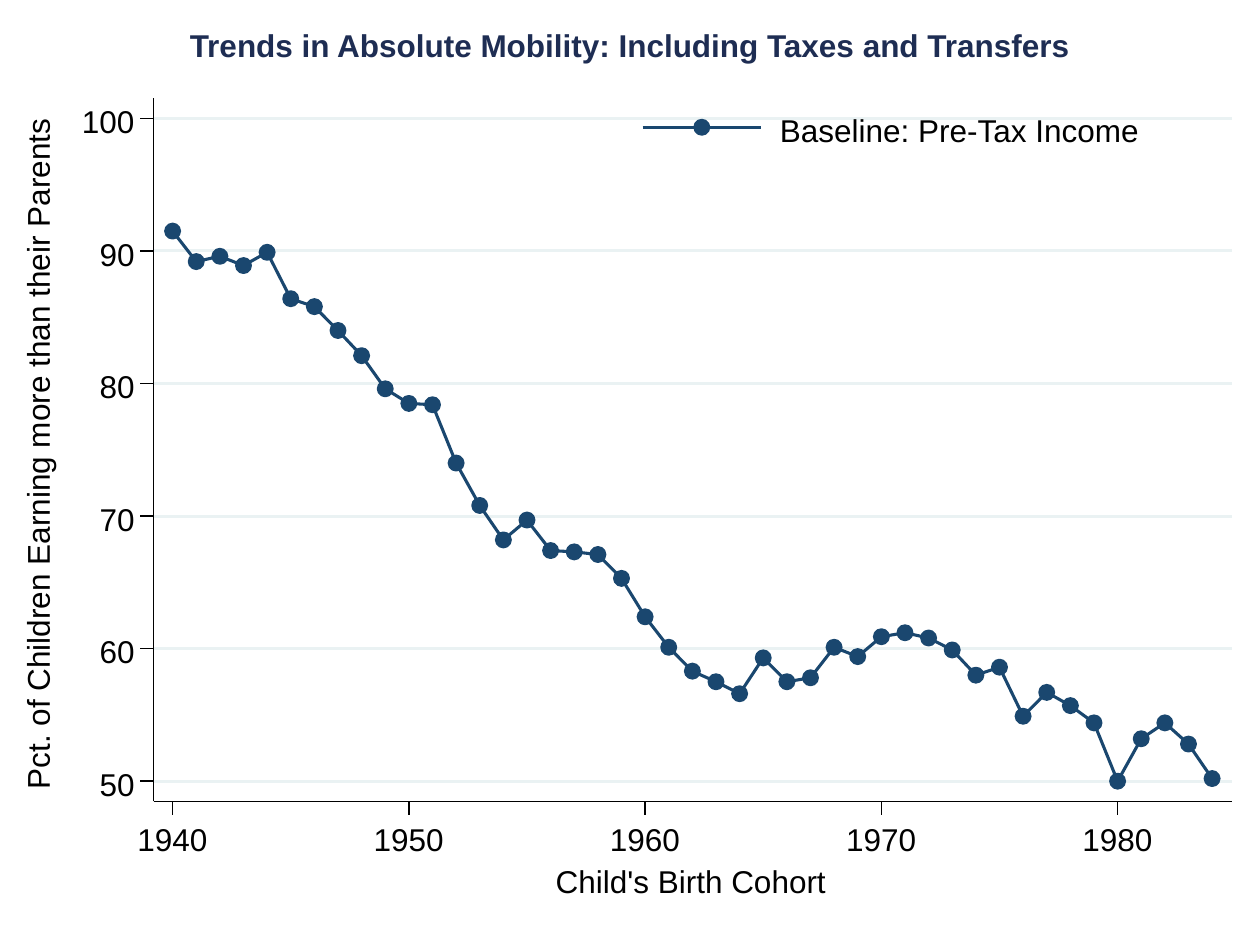
from dataclasses import dataclass

from lxml import etree
from pptx import Presentation
from pptx import util as u
from pptx.dml.color import RGBColor
from pptx.enum import shapes, text
from pptx.oxml.ns import qn


@dataclass(frozen=True)
class Theme:
    paper: str = "FFFFFF"
    ink: str = "000000"
    title: str = "1E2D53"
    series: str = "1A476F"
    grid: str = "EAF2F3"
    font: str = "Arial"
    size: float = 18
    thin: float = 0.88
    thick: float = 1.75


FIRST_YEAR = 1940
MOBILITY = [
    91.5, 89.2, 89.6, 88.9, 89.9, 86.4, 85.8, 84.0, 82.1, 79.6,
    78.5, 78.4, 74.0, 70.8, 68.2, 69.7, 67.4, 67.3, 67.1, 65.3,
    62.4, 60.1, 58.3, 57.5, 56.6, 59.3, 57.5, 57.8, 60.1, 59.4,
    60.9, 61.2, 60.8, 59.9, 58.0, 58.6, 54.9, 56.7, 55.7, 54.4,
    50.0, 53.2, 54.4, 52.8, 50.2,
]
LEFT, TOP, RIGHT, BOTTOM = 1.22, 0.78, 9.78, 6.36
TICK = 0.11
DIGIT = 0.14
LABEL_HEIGHT = 0.36
MARKER = 0.11


def year_x(year):
    return 1.37 + (year - FIRST_YEAR) * 8.25 / 44


def percent_y(percent):
    return 6.2 - (percent - 50) * 5.26 / 50


class Painter:
    def __init__(self, page, theme):
        self.page = page
        self.theme = theme

    def stroke(self, item, color, width):
        item.line.color.rgb = RGBColor.from_string(color)
        item.line.width = u.Pt(width)

    def shape(self, kind, left, top, width, height, color, line_width):
        item = self.page.shapes.add_shape(
            kind, u.Inches(left), u.Inches(top), u.Inches(width), u.Inches(height))
        item.shadow.inherit = False
        item.fill.solid()
        item.fill.fore_color.rgb = RGBColor.from_string(color)
        self.stroke(item, color, line_width)

    def panel(self, left, top, width, height):
        self.shape(shapes.MSO_SHAPE.RECTANGLE, left, top, width, height,
                   self.theme.paper, self.theme.thin)

    def marker(self, x, y):
        self.shape(shapes.MSO_SHAPE.OVAL, x - MARKER / 2, y - MARKER / 2,
                   MARKER, MARKER, self.theme.series, self.theme.thick)

    def line(self, x1, y1, x2, y2, color, width):
        item = self.page.shapes.add_connector(
            shapes.MSO_CONNECTOR.STRAIGHT,
            u.Inches(x1), u.Inches(y1), u.Inches(x2), u.Inches(y2))
        self.stroke(item, color, width)
        etree.SubElement(item._element.spPr, qn("a:effectLst"))

    def axis(self, x1, y1, x2, y2):
        self.line(x1, y1, x2, y2, self.theme.ink, self.theme.thin)

    def curve(self, points):
        corners = [(u.Inches(x), u.Inches(y)) for x, y in points]
        builder = self.page.shapes.build_freeform(*corners[0])
        builder.add_line_segments(corners[1:], close=False)
        item = builder.convert_to_shape()
        item.shadow.inherit = False
        item.fill.background()
        self.stroke(item, self.theme.series, self.theme.thick)

    def label(self, words, left, top, width, height=LABEL_HEIGHT, rotation=0):
        box = self.page.shapes.add_textbox(
            u.Inches(left), u.Inches(top), u.Inches(width), u.Inches(height))
        box.rotation = rotation
        frame = box.text_frame
        frame.margin_left = frame.margin_right = 0
        frame.margin_top = frame.margin_bottom = 0
        frame.word_wrap = False
        frame.auto_size = text.MSO_AUTO_SIZE.SHAPE_TO_FIT_TEXT
        frame.text = words
        font = frame.paragraphs[0].font
        font.name = self.theme.font
        font.size = u.Pt(self.theme.size)
        font.color.rgb = RGBColor.from_string(self.theme.ink)
        return frame

    def title(self, words):
        frame = self.label(words, 0, 0.21, 10, 0.3)
        frame.word_wrap = True
        paragraph = frame.paragraphs[0]
        paragraph.alignment = text.PP_ALIGN.CENTER
        paragraph.font.bold = True
        paragraph.font.color.rgb = RGBColor.from_string(self.theme.title)


def main():
    deck = Presentation()
    deck.slide_width, deck.slide_height = u.Inches(10), u.Inches(7.5)
    theme = Theme()
    painter = Painter(deck.slides.add_slide(deck.slide_layouts[6]), theme)

    painter.panel(0, 0.12, 9.99, 7.27)
    painter.panel(LEFT, TOP, RIGHT - LEFT, BOTTOM - TOP)
    percents = range(50, 101, 10)
    for percent in percents:
        y = percent_y(percent)
        painter.line(LEFT, y, RIGHT, y, theme.grid, theme.thick)

    points = [(year_x(year), percent_y(value))
              for year, value in enumerate(MOBILITY, FIRST_YEAR)]
    painter.curve(points)
    for x, y in points:
        painter.marker(x, y)

    painter.axis(LEFT, BOTTOM, LEFT, TOP)
    for percent in percents:
        y = percent_y(percent)
        width = DIGIT * len(str(percent))
        painter.axis(LEFT, y, LEFT - TICK, y)
        painter.label(str(percent), 1.07 - width, y - 0.13, width + 0.13)
    painter.label("Pct. of Children Earning more than their Parents",
                  -2.55, 3.21, 5.75, rotation=270)

    painter.axis(LEFT, BOTTOM, RIGHT, BOTTOM)
    for year in range(FIRST_YEAR, 1981, 10):
        x = year_x(year)
        painter.axis(x, BOTTOM, x, BOTTOM + TICK)
        painter.label(str(year), x - 0.28, 6.51, 0.7)
    painter.label("Child's Birth Cohort", 4.41, 6.84, 2.39)

    painter.title("Trends in Absolute Mobility: Including Taxes and Transfers")
    painter.line(5.1, 1.01, 6.04, 1.01, theme.series, theme.thick)
    painter.marker(5.57, 1.01)
    painter.label("Baseline: Pre-Tax Income", 6.19, 0.88, 3.16)

    deck.save("out.pptx")


if __name__ == "__main__":
    main()
